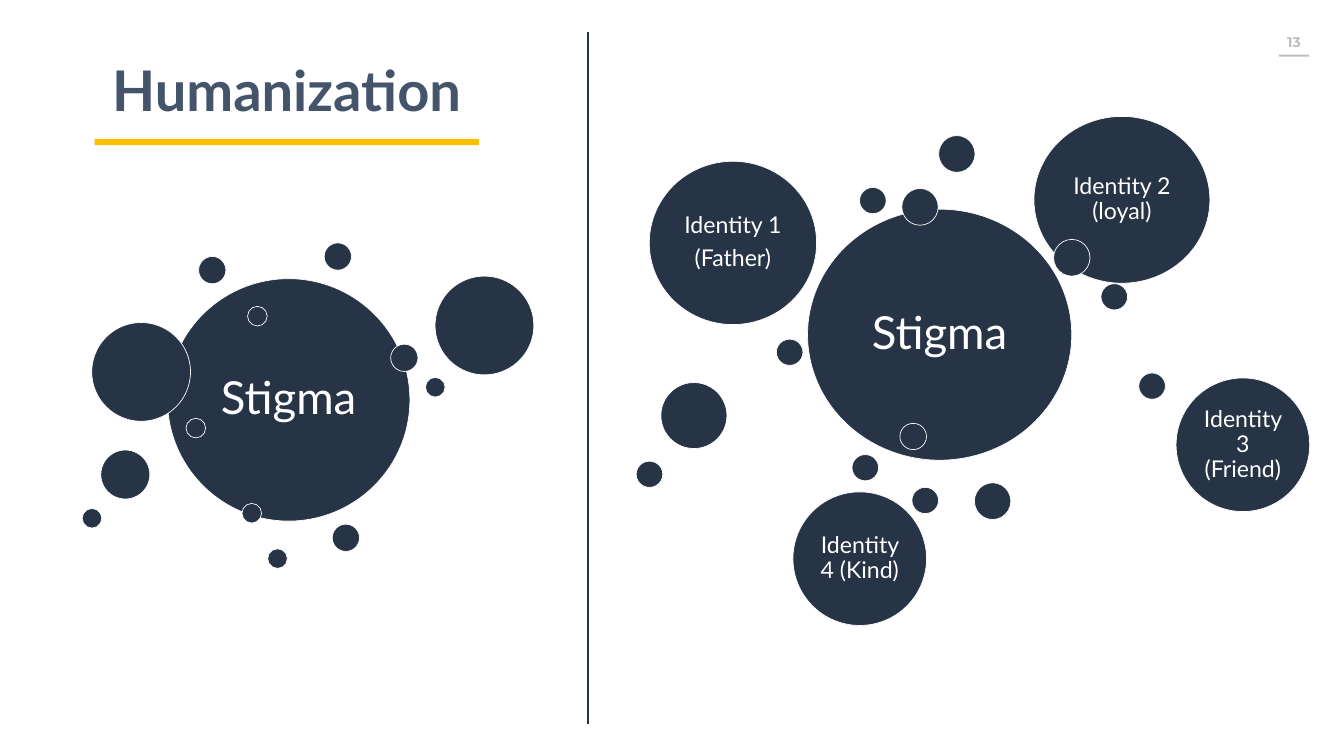
import pptx
import pptx.dml.color
import pptx.enum.shapes
import pptx.enum.text
import pptx.oxml.ns
import pptx.util
from lxml import etree

Pt = pptx.util.Pt
SHAPES = pptx.enum.shapes.MSO_SHAPE
CENTER = pptx.enum.text.PP_ALIGN.CENTER
MIDDLE = pptx.enum.text.MSO_ANCHOR.MIDDLE

NAVY, SLATE, GOLD, GREY, WHITE = "263445", "44546A", "FFC000", "BFBFBF", "FFFFFF"


def color(hex_value):
    return pptx.dml.color.RGBColor.from_string(hex_value)


def style_font(paragraph, name, size, hex_value, bold=False):
    paragraph.alignment = CENTER
    paragraph.font.name = name
    paragraph.font.size = Pt(size)
    paragraph.font.bold = bold
    paragraph.font.color.rgb = color(hex_value)


def add_bar(slide, left, top, width, height, hex_value):
    bar = slide.shapes.add_shape(SHAPES.RECTANGLE, Pt(left), Pt(top), Pt(width), Pt(height))
    bar.shadow.inherit = False
    bar.fill.solid()
    bar.fill.fore_color.rgb = color(hex_value)
    bar.line.fill.background()


def add_caption(slide, left, top, width, height, text, *font):
    caption = slide.shapes.add_textbox(Pt(left), Pt(top), Pt(width), Pt(height))
    caption.text_frame.word_wrap = True
    caption.text_frame.text = text
    style_font(caption.text_frame.paragraphs[0], *font)


def add_title(slide, left, top, width, height):
    add_caption(slide, left, top, width, 104, "Humanization", "Lato", 80, SLATE, True)
    add_bar(slide, left + (width - 549) / 2, top + height - 9, 549, 9, GOLD)


def add_page_number(slide, left, top, width, height):
    add_caption(slide, left, top, width, height, "13", "Montserrat", 20, GREY, True)
    add_bar(slide, left + (width - 43) / 2, top + 33, 43, 3, GREY)


def add_divider(slide, x, top, bottom):
    divider = slide.shapes.add_connector(
        pptx.enum.shapes.MSO_CONNECTOR.STRAIGHT, Pt(x), Pt(top), Pt(x), Pt(bottom))
    divider.line.color.rgb = color(NAVY)
    divider.line.width = Pt(3.5)
    etree.SubElement(divider._element.spPr, pptx.oxml.ns.qn("a:effectLst"))


def add_bubble(slide, left, top, width, height, lines=(), size=33, inset=10):
    bubble = slide.shapes.add_shape(SHAPES.OVAL, Pt(left), Pt(top), Pt(width), Pt(height))
    bubble.shadow.inherit = False
    bubble.fill.solid()
    bubble.fill.fore_color.rgb = color(NAVY)
    bubble.line.color.rgb = color(WHITE)
    bubble.line.width = Pt(1)
    if not lines:
        return
    label = bubble.text_frame
    label.word_wrap = True
    label.vertical_anchor = MIDDLE
    label.margin_left = label.margin_right = Pt(inset)
    label.margin_top = label.margin_bottom = Pt(inset)
    label.text = "\n".join(lines)
    for paragraph in label.paragraphs:
        paragraph.line_spacing = 0.9
        paragraph.space_after = Pt(size * 0.35)
        style_font(paragraph, "Lato", size, WHITE)


def add_cluster(slide, left, top, bubbles):
    """Each bubble: x and y in the cluster, (width, height), then its label."""
    for x, y, (width, height), *label in bubbles:
        add_bubble(slide, left + x, top + y, width, height, *label)


STIGMA = (["Stigma"], 65, 19.5)

# Bubble sizes: left cluster, then right cluster
DOT, BALL, GLOBE = (28, 28), (39, 39), (141, 141)
BEAD, MARBLE, DISC = (38, 37.5), (52, 52.5), (190.8, 190.8)

STIGMA_ALONE = [
    (121.7, 51.1, (346.3, 346.3), *STIGMA),
    (345.6, 0, BALL),
    (228.2, 372.2, DOT),
    (490.3, 192.2, DOT),
    (357.1, 401.8, BALL),
    (236.2, 90.7, DOT),
    (148.3, 250.6, DOT),
    (13.7, 113.8, GLOBE),
    (166.3, 19.4, BALL),
    (26.6, 295.9, (70, 70)),
    (504, 47.5, GLOBE),
    (440.6, 144.7, BALL),
    (0, 379.4, DOT),
    (265, 437, DOT),
]

STIGMA_WITH_IDENTITIES = [
    (244.8, 132.5, (377.3, 358.6), *STIGMA),
    (432, 27.4, MARBLE),
    (308.2, 483.1, BEAD),
    (663.8, 239, BEAD),
    (483.1, 523.4, MARBLE),
    (319, 101.5, BEAD),
    (200.2, 318.2, BEAD),
    (18.7, 64.1, (239, 233.3), ["Identity 1", "(Father)"]),
    (379.4, 103, MARBLE),
    (35.3, 380.2, (94.3, 94.3)),
    (568.1, 0, (251.3, 238.3), ["Identity 2 (loyal)"]),
    (596.2, 175.7, MARBLE),
    (0, 492.5, BEAD),
    (376.6, 438.5, BEAD),
    (771.1, 373.7, DISC, ["Identity 3 (Friend)"]),
    (717.8, 366.5, BEAD),
    (223.9, 536.4, DISC, ["Identity 4 (Kind)"]),
    (393.8, 529.9, BEAD),
]


def main():
    deck = pptx.Presentation()
    deck.slide_width, deck.slide_height = Pt(1919.52), Pt(1080)
    slide = deck.slides.add_slide(deck.slide_layouts[6])

    # Page number, title and divider
    add_page_number(slide, 1814, 45, 68, 39)
    add_title(slide, 46, 75.6, 727, 131.8)
    add_divider(slide, 839.5, 46, 1034)

    # Stigma by itself, then among other identities
    add_cluster(slide, 117.4, 347, STIGMA_ALONE)
    add_cluster(slide, 908.6, 166.3, STIGMA_WITH_IDENTITIES)

    deck.save("out.pptx")


if __name__ == "__main__":
    main()
